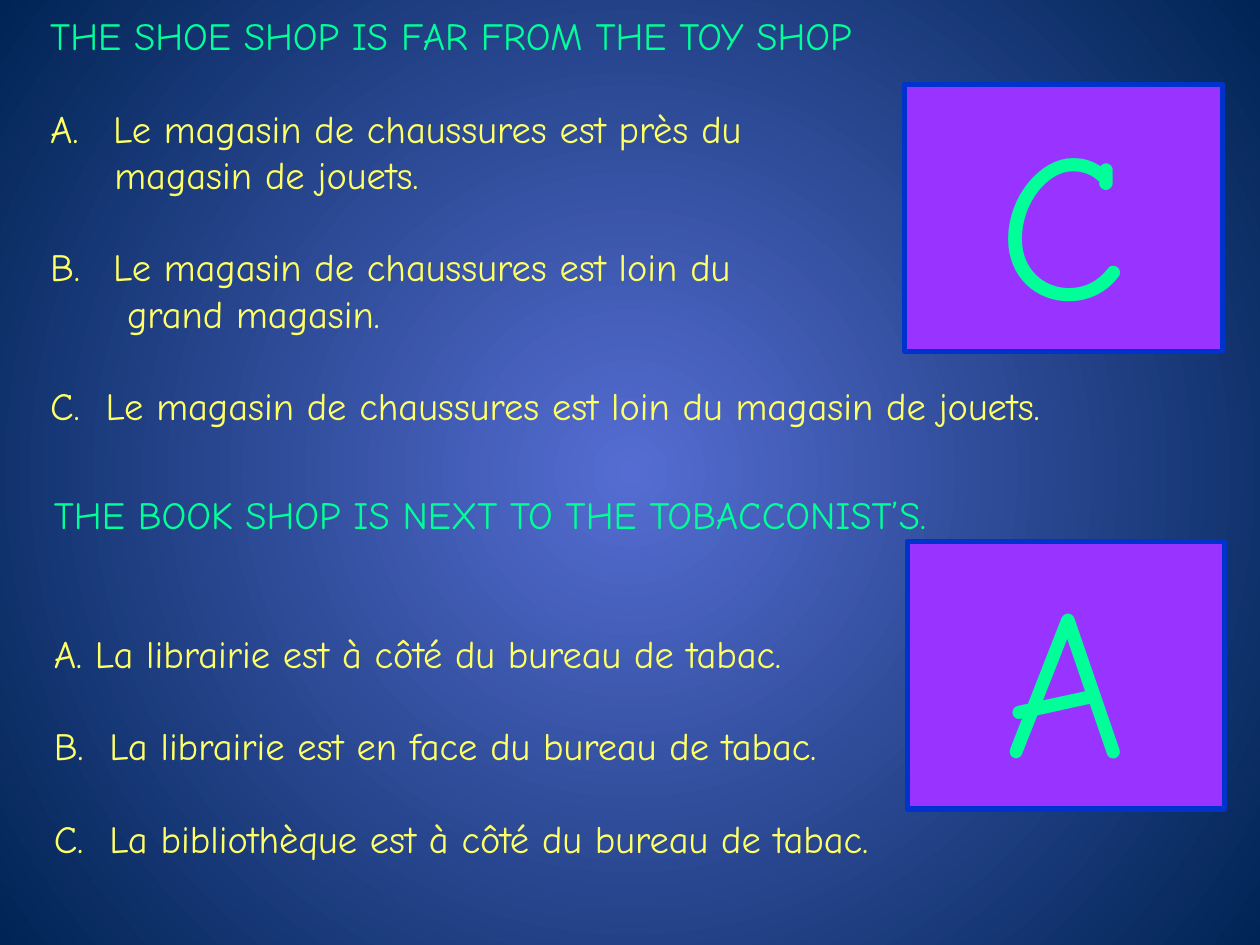
from pptx import Presentation
from pptx.dml.color import RGBColor
from pptx.enum.shapes import MSO_SHAPE
from pptx.enum.text import MSO_ANCHOR, MSO_AUTO_SIZE, PP_ALIGN
from pptx.oxml import parse_xml
from pptx.oxml.ns import nsdecls, qn
from pptx.util import Inches, Pt

GREEN = RGBColor(0x00, 0xFF, 0x99)
YELLOW = RGBColor(0xFF, 0xFF, 0x66)
PURPLE = RGBColor(0x99, 0x33, 0xFF)
BLUE = RGBColor(0x00, 0x33, 0xCC)
GLOW = RGBColor(0x55, 0x6D, 0xD2)
NAVY = RGBColor(0x00, 0x24, 0x54)


class QuizPage:
    font = "Comic Neue"
    text_size = 22
    line_height = 26.4
    answer_size = 120

    def __init__(self, deck):
        self.page = deck.slides.add_slide(deck.slide_layouts[6])

    def background(self, center, edge):
        """Fill the page with a circular gradient."""
        fill = self.page.background.fill
        fill.gradient()
        for stop, color in zip(fill.gradient_stops, (center, edge)):
            stop.color.rgb = color
        linear = self.page.element.find(".//" + qn("a:lin"))
        linear.getparent().replace(linear, parse_xml(
            f'<a:path {nsdecls("a")} path="circle">'
            '<a:fillToRect l="50000" t="50000" r="50000" b="50000"/></a:path>'))

    def span(self, para, text, size, color):
        span = para.add_run()
        span.text = text
        span.font.name = self.font
        span.font.size = Pt(size)
        span.font.color.rgb = color

    def question(self, left, top, width, height, title, lines):
        """Lines are (text, blank lines above, left indent, hanging, number)."""
        box = self.page.shapes.add_textbox(
            Inches(left), Inches(top), Inches(width), Inches(height))
        frame = box.text_frame
        frame.word_wrap = True
        frame.auto_size = MSO_AUTO_SIZE.SHAPE_TO_FIT_TEXT
        self.span(frame.paragraphs[0], title, self.text_size, GREEN)
        for text, gap, indent, hanging, number in lines:
            para = frame.add_paragraph()
            para.space_before = Pt(gap * self.line_height)
            self.span(para, text, self.text_size, YELLOW)
            props = para._p.get_or_add_pPr()
            props.set("marL", str(Inches(indent)))
            props.set("indent", str(Inches(-indent if hanging else 0)))
            if number:
                props.append(parse_xml(
                    f'<a:buAutoNum {nsdecls("a")} type="alphaUcPeriod" '
                    f'startAt="{number}"/>'))

    def answer(self, left, top, letter):
        card = self.page.shapes.add_shape(
            MSO_SHAPE.RECTANGLE, Inches(left), Inches(top),
            Inches(2.52), Inches(2.12))
        card.shadow.inherit = False
        card.fill.solid()
        card.fill.fore_color.rgb = PURPLE
        card.line.color.rgb = BLUE
        card.line.width = Pt(3)
        frame = card.text_frame
        frame.word_wrap = True
        frame.auto_size = MSO_AUTO_SIZE.SHAPE_TO_FIT_TEXT
        frame.vertical_anchor = MSO_ANCHOR.TOP
        para = frame.paragraphs[0]
        para.alignment = PP_ALIGN.CENTER
        self.span(para, letter, self.answer_size, GREEN)


def main():
    deck = Presentation()
    deck.slide_width, deck.slide_height = Inches(10), Inches(7.5)
    quiz = QuizPage(deck)
    quiz.background(GLOW, NAVY)
    quiz.question(0.3, 0.05, 8.71, 3.8, "THE SHOE SHOP IS FAR FROM THE TOY SHOP", [
        ("Le magasin de chaussures est près du", 1, 0.5, True, 1),
        ("magasin de jouets.", 0, 0.51, False, None),
        ("Le magasin de chaussures est loin du", 1, 0.5, True, 2),
        ("grand magasin.", 0, 0.61, False, None),
        ("C.\tLe magasin de chaussures est loin du magasin de jouets.",
         1, 0.44, True, None),
    ])
    quiz.answer(7.18, 0.67, "C")
    quiz.question(0.33, 3.85, 9, 3.43, "THE BOOK SHOP IS NEXT TO THE TOBACCONIST’S.", [
        ("A. La librairie est à côté du bureau de tabac.", 2, 0, False, None),
        ("B.\tLa librairie est en face du bureau de tabac.", 1, 0.44, True, None),
        ("C.\tLa bibliothèque est à côté du bureau de tabac.", 1, 0.44, True, None),
    ])
    quiz.answer(7.2, 4.3, "A")
    deck.save("out.pptx")


if __name__ == "__main__":
    main()
